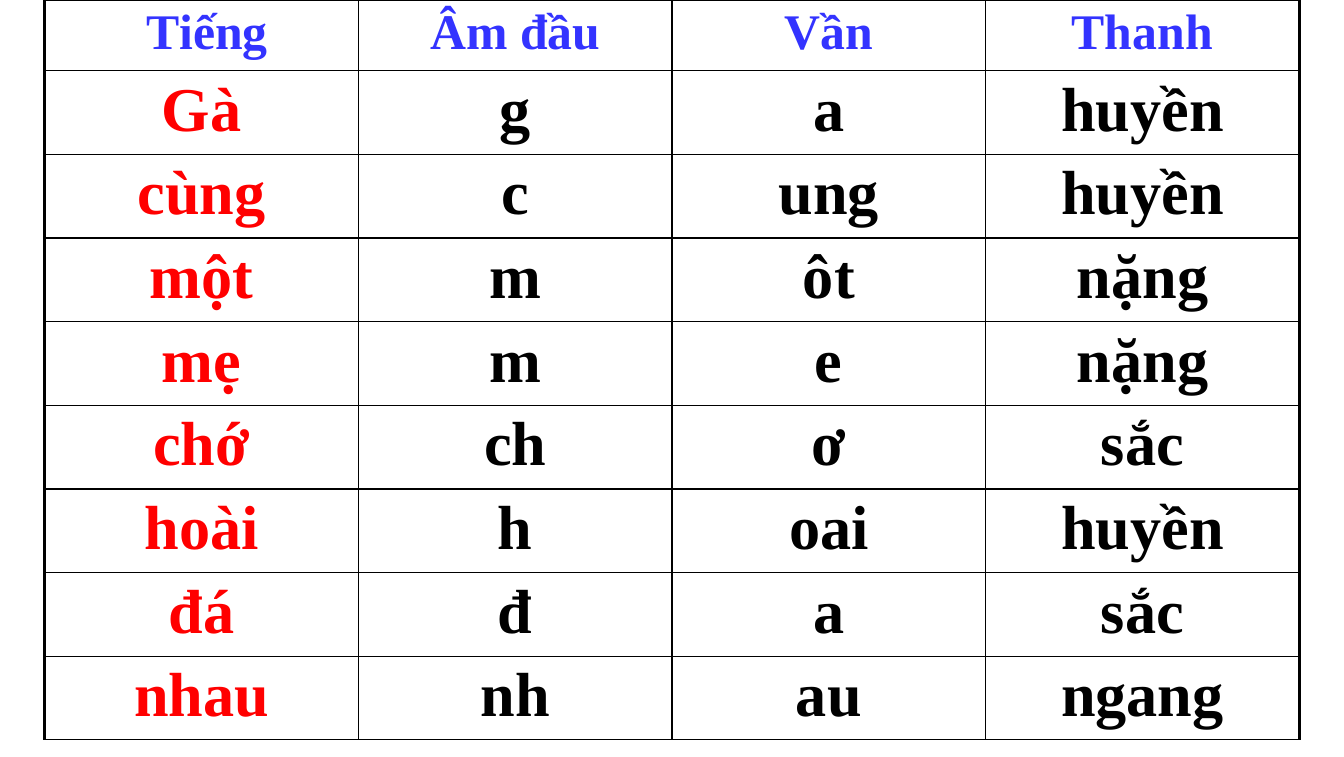
from dataclasses import dataclass

from lxml import etree
from pptx import Presentation
from pptx.dml.color import RGBColor
from pptx.enum.text import PP_ALIGN
from pptx.oxml.ns import qn
from pptx.util import Emu, Pt

CENTER = PP_ALIGN.CENTER
SCALE = 9144  # EMU in one px, at 100 px to the inch


@dataclass(frozen=True)
class Theme:
    font: str = "Times New Roman"
    head: str = "3333FF"
    word: str = "FF0000"
    ink: str = "000000"
    head_size: int = 36
    body_size: int = 45
    thin: float = 1
    thick: float = 2.25
    gap: int = 20


@dataclass(frozen=True)
class Row:
    """One syllable split into its initial, rhyme and tone."""
    word: str
    initial: str
    rhyme: str
    tone: str

    def texts(self) -> tuple[str, ...]:
        return self.word, self.initial, self.rhyme, self.tone


THEME = Theme()
ROWS = [
    Row(" Tiếng", "Âm đầu", "Vần", "Thanh"),
    Row("Gà", "g", "a", "huyền"),
    Row("cùng", "c", "ung", "huyền"),
    Row("một", "m", "ôt", "nặng"),
    Row("mẹ", "m", "e", "nặng"),
    Row("chớ", "ch", "ơ", "sắc"),
    Row("hoài", "h", "oai", "huyền"),
    Row("đá", "đ", "a", "sắc"),
    Row("nhau", "nh", "au", "ngang"),
]
COLS = 4
LEFT, TOP, COL_W = 45, 0, 315
HEAD_H, BODY_H = 71, 84
MARGINS = {"margin_left": 14, "margin_top": 5, "margin_right": 14, "margin_bottom": 5}


def px(count: int) -> Emu:
    return Emu(count * SCALE)


def set_edges(cell, row: int, col: int) -> None:
    """Draw thick lines at the table's top and sides, thin ones elsewhere."""
    edges = {"L": col == 0, "R": col == COLS - 1, "T": row == 0, "B": False}
    props = cell._tc.get_or_add_tcPr()
    for side, outer in edges.items():
        width = Pt(THEME.thick if outer else THEME.thin)
        line = etree.SubElement(props, qn(f"a:ln{side}"), w=str(width))
        fill = etree.SubElement(line, qn("a:solidFill"))
        etree.SubElement(fill, qn("a:srgbClr"), val=THEME.ink)


def set_text(cell, text: str, size: int, color: str) -> None:
    para = cell.text_frame.paragraphs[0]
    para.alignment = CENTER
    before = etree.SubElement(para._p.get_or_add_pPr(), qn("a:spcBef"))
    etree.SubElement(before, qn("a:spcPct"), val=str(THEME.gap * 1000))
    run = para.add_run()
    run.text = text
    style = {"name": THEME.font, "size": Pt(size), "bold": True}
    for name, value in style.items():
        setattr(run.font, name, value)
    run.font.color.rgb = RGBColor.from_string(color)


def fill_cell(cell, text: str, row: int, col: int) -> None:
    for name, value in MARGINS.items():
        setattr(cell, name, px(value))
    set_edges(cell, row, col)
    cell.fill.background()
    if row == 0:
        set_text(cell, text, THEME.head_size, THEME.head)
    else:
        color = THEME.word if col == 0 else THEME.ink
        set_text(cell, text, THEME.body_size, color)


def add_grid(slide) -> None:
    heights = [HEAD_H] + [BODY_H] * (len(ROWS) - 1)
    table = slide.shapes.add_table(
        len(ROWS), COLS, px(LEFT), px(TOP), px(COL_W * COLS), px(sum(heights))
    ).table
    table.first_row = table.horz_banding = False
    for column in table.columns:
        column.width = px(COL_W)
    for index, (row, height) in enumerate(zip(ROWS, heights)):
        table.rows[index].height = px(height)
        for col, text in enumerate(row.texts()):
            fill_cell(table.cell(index, col), text, index, col)


def main() -> None:
    deck = Presentation()
    deck.slide_width, deck.slide_height = px(1350), px(760)
    slide = deck.slides.add_slide(deck.slide_layouts[6])
    add_grid(slide)
    deck.save("out.pptx")


if __name__ == "__main__":
    main()
